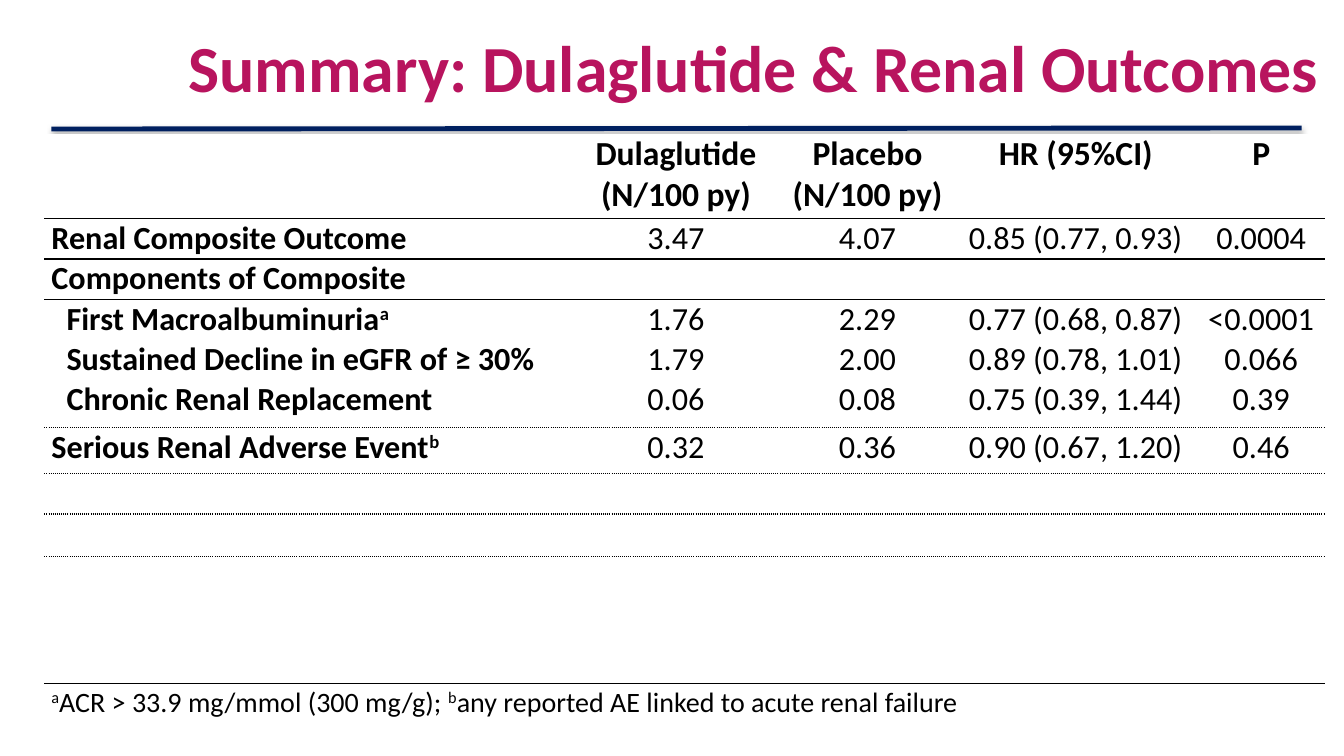
from lxml import etree
from pptx import Presentation
from pptx.dml.color import RGBColor
from pptx.enum.shapes import MSO_CONNECTOR
from pptx.enum.text import MSO_ANCHOR, MSO_AUTO_SIZE, PP_ALIGN
from pptx.oxml import parse_xml
from pptx.oxml.ns import nsdecls, qn
from pptx.util import Inches, Pt

STRAIGHT = MSO_CONNECTOR.STRAIGHT
MIDDLE = MSO_ANCHOR.MIDDLE
NO_AUTOFIT = MSO_AUTO_SIZE.NONE
LEFT, CENTER = PP_ALIGN.LEFT, PP_ALIGN.CENTER

COLORS = {"title": "B8145E", "rule": "002060", "text": "000000", "cell": "FFFFFF"}
FORMATS = {
    "title": {"name": "Calibri", "size": Pt(47), "bold": True},
    "header": {"name": "Calibri", "size": Pt(24), "bold": True},
    "label": {"name": "Calibri", "size": Pt(23), "bold": True},
    "value": {"name": "Calibri", "size": Pt(23), "bold": False},
    "note": {"name": "Calibri", "size": Pt(20), "bold": False},
}
NO_STYLE = "{2D5ABB26-0587-4C30-8999-92F81FD0307C}"

COLUMN_WIDTHS = [5.22, 2.09, 1.71, 2.42, 1.26]
ROW_HEIGHTS = [0.84] + [0.4] * 4 + [0.47, 0.46, 0.4] + [0.42] * 4 + [0.47]
ROW_RULES = {0: "solid", 1: "solid", 5: "sysDot", 6: "sysDot", 7: "sysDot", 11: "solid"}
CELL_INSET, SUB_INDENT = 0.07, 0.15

HEADERS = [["Dulaglutide", "(N/100 py)"], ["Placebo", "(N/100 py)"], ["HR (95%CI)"], ["P"]]
# Label pieces alternate between normal and superscript text.
OUTCOMES = [
    (["Renal Composite Outcome"], ["3.47", "4.07", "0.85 (0.77, 0.93)", "0.0004"]),
    (["Components of Composite"], []),
    (["First Macroalbuminuria", "a"], ["1.76", "2.29", "0.77 (0.68, 0.87)", "<0.0001"]),
    (["Sustained Decline in eGFR of ≥ 30%"], ["1.79", "2.00", "0.89 (0.78, 1.01)", "0.066"]),
    (["Chronic Renal Replacement"], ["0.06", "0.08", "0.75 (0.39, 1.44)", "0.39"]),
    (["Serious Renal Adverse Event", "b"], ["0.32", "0.36", "0.90 (0.67, 1.20)", "0.46"]),
]
COMPONENT_ROWS = (3, 4, 5)
FOOTNOTE = ["", "a", "ACR > 33.9 mg/mmol (300 mg/g); ", "b",
            "any reported AE linked to acute renal failure"]


def rgb(name):
    return RGBColor.from_string(COLORS[name])


def add_runs(p, pieces, style, color="text"):
    """Add pieces as runs, every second one raised as superscript."""
    for i, text in enumerate(pieces):
        if not text:
            continue
        r = p.add_run()
        r.text = text
        for key, value in FORMATS[style].items():
            setattr(r.font, key, value)
        r.font.color.rgb = rgb(color)
        if i % 2:
            r.font._element.set("baseline", "30000")


def add_title(slide, text):
    sp = slide.shapes.title
    sp.left, sp.top, sp.width, sp.height = map(Inches, (1.77, 0.08, 11.62, 1.25))
    tf = sp.text_frame
    tf.auto_size = NO_AUTOFIT
    tf.vertical_anchor = MIDDLE
    p = tf.paragraphs[0]
    p.alignment = LEFT
    p.line_spacing = 0.9
    add_runs(p, [text], "title", "title")


def add_title_rule(slide):
    line = slide.shapes.add_connector(
        STRAIGHT, Inches(0.51), Inches(1.28), Inches(12.91), Inches(1.27))
    line.line.color.rgb = rgb("rule")
    line.line.width = Pt(3.5)
    line._element.spPr.append(parse_xml(
        f'<a:effectLst {nsdecls("a")}>'
        f'<a:outerShdw blurRad="{Pt(3.1)}" dist="{Pt(1.8)}" dir="5400000" rotWithShape="0">'
        f'<a:srgbClr val="{COLORS["text"]}"><a:alpha val="35000"/></a:srgbClr>'
        '</a:outerShdw></a:effectLst>'))


def add_border(cell, side, dash):
    ln = etree.SubElement(cell._tc.get_or_add_tcPr(), qn(f"a:{side}"), w=str(Pt(1)))
    fill = etree.SubElement(ln, qn("a:solidFill"))
    etree.SubElement(fill, qn("a:srgbClr"), val=COLORS["text"])
    etree.SubElement(ln, qn("a:prstDash"), val=dash)


def fill_cell(cell, paragraphs, style, align=CENTER):
    tf = cell.text_frame
    for i, pieces in enumerate(paragraphs):
        p = tf.add_paragraph() if i else tf.paragraphs[0]
        p.alignment = align
        add_runs(p, pieces, style)


def add_empty_table(slide):
    """Add the grid with its sizes, insets, horizontal rules and fills."""
    frame = slide.shapes.add_table(
        len(ROW_HEIGHTS), len(COLUMN_WIDTHS), Inches(0.44), Inches(1.33),
        Inches(sum(COLUMN_WIDTHS)), Inches(sum(ROW_HEIGHTS)))
    table = frame.table
    table.first_row = table.horz_banding = False
    table._tbl.tblPr.find(qn("a:tableStyleId")).text = NO_STYLE
    for column, width in zip(table.columns, COLUMN_WIDTHS):
        column.width = Inches(width)
    for i, height in enumerate(ROW_HEIGHTS):
        table.rows[i].height = Inches(height)
        for cell in table.rows[i].cells:
            cell.margin_left = cell.margin_right = Inches(CELL_INSET)
            cell.margin_top = cell.margin_bottom = 0
            if i - 1 in ROW_RULES:
                add_border(cell, "lnT", ROW_RULES[i - 1])
            if i in ROW_RULES:
                add_border(cell, "lnB", ROW_RULES[i])
            cell.fill.solid()
            cell.fill.fore_color.rgb = rgb("cell")
    return table


def add_outcomes_table(slide):
    table = add_empty_table(slide)
    for col, lines in enumerate(HEADERS, 1):
        fill_cell(table.cell(0, col), [[line] for line in lines], "header")
    for row, (label, values) in enumerate(OUTCOMES, 1):
        fill_cell(table.cell(row, 0), [label], "label", LEFT)
        for col, value in enumerate(values, 1):
            fill_cell(table.cell(row, col), [[value]], "value")
    for row in COMPONENT_ROWS:
        table.cell(row, 0).margin_left = Inches(CELL_INSET + SUB_INDENT)
    last = len(ROW_HEIGHTS) - 1
    note = table.cell(last, 0)
    note.merge(table.cell(last, len(COLUMN_WIDTHS) - 1))
    fill_cell(note, [FOOTNOTE], "note", LEFT)
    note.text_frame.paragraphs[0].line_spacing = 1.07


def main():
    prs = Presentation()
    prs.slide_width, prs.slide_height = Inches(13.33), Inches(7.5)
    slide = prs.slides.add_slide(prs.slide_layouts[5])
    add_title_rule(slide)
    add_title(slide, "Summary: Dulaglutide & Renal Outcomes")
    add_outcomes_table(slide)
    prs.save("out.pptx")


if __name__ == "__main__":
    main()
